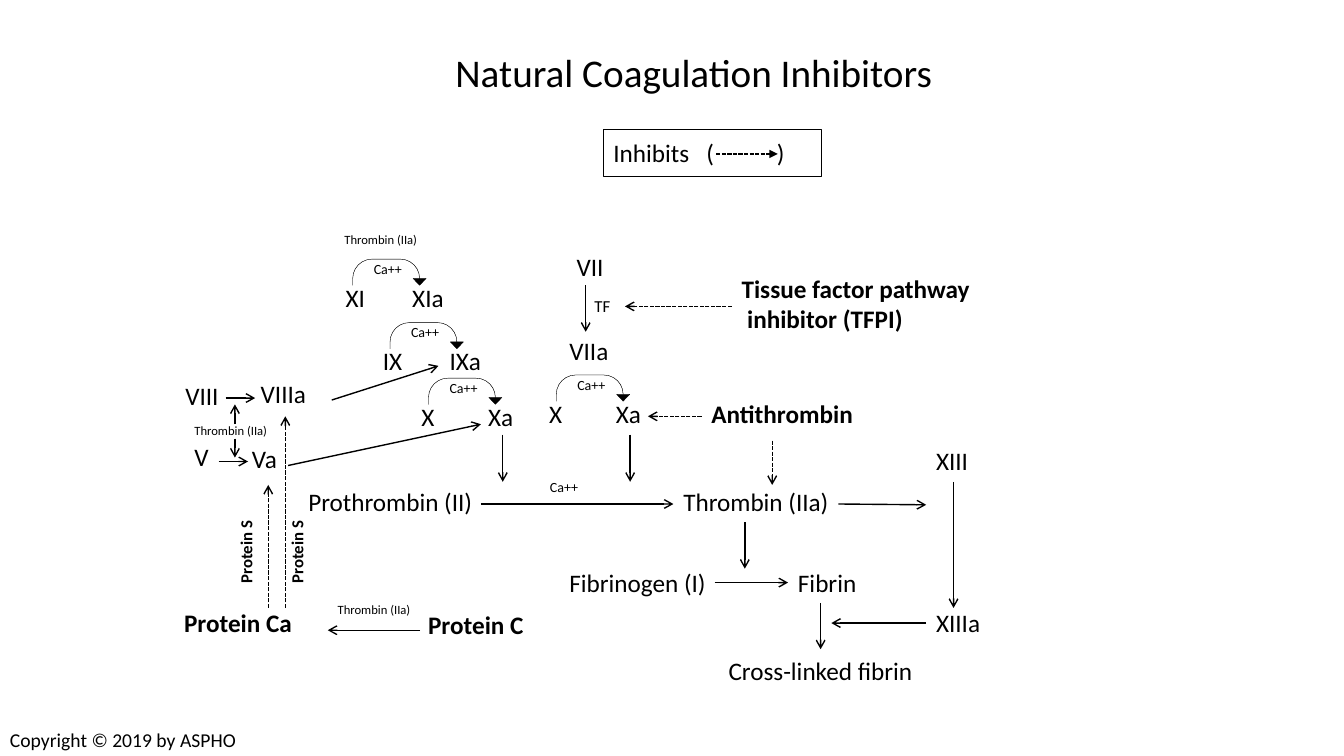
from dataclasses import dataclass

from lxml import etree
from pptx import Presentation
from pptx.dml.color import RGBColor
from pptx.enum.dml import MSO_LINE
from pptx.enum.shapes import MSO_CONNECTOR, MSO_SHAPE
from pptx.enum.text import MSO_ANCHOR, PP_ALIGN
from pptx.oxml.ns import qn
from pptx.util import Cm, Pt

STRAIGHT = MSO_CONNECTOR.STRAIGHT
U_TURN = MSO_SHAPE.U_TURN_ARROW
RECTANGLE = MSO_SHAPE.RECTANGLE
DASH = MSO_LINE.SQUARE_DOT
MIDDLE = MSO_ANCHOR.MIDDLE
LEFT = PP_ALIGN.LEFT


@dataclass(frozen=True)
class Theme:
    font: str = "Calibri"
    ink: RGBColor = RGBColor(0, 0, 0)
    title: int = 28
    factor: int = 18
    copyright: int = 14
    note: int = 12
    calcium: int = 10
    enzyme: int = 9


THEME = Theme()


def style(para, size, bold=False):
    para.alignment = LEFT
    para.font.name = THEME.font
    para.font.size = Pt(size)
    para.font.bold = bold
    para.font.color.rgb = THEME.ink


@dataclass(frozen=True)
class Region:
    page: object
    left: float
    top: float

    def label(self, text, x, y, width, size=THEME.factor, bold=False, rotation=0):
        lines = text.split("\n")
        height = Pt(size * 1.2) * len(lines) + Cm(0.25)
        box = self.page.shapes.add_textbox(
            Cm(self.left + x), Cm(self.top + y), Cm(width), height)
        box.rotation = rotation
        frame = box.text_frame
        frame.word_wrap = True
        frame.text = text
        for para in frame.paragraphs:
            style(para, size, bold)
        return box

    def arrow(self, x1, y1, x2, y2, dashed=False, head="arrow"):
        connector = self.page.shapes.add_connector(
            STRAIGHT, Cm(self.left + x1), Cm(self.top + y1),
            Cm(self.left + x2), Cm(self.top + y2))
        line = connector.line
        line.color.rgb = THEME.ink
        line.width = Pt(1)
        if dashed:
            line.dash_style = DASH
        etree.SubElement(line._get_or_add_ln(), qn("a:tailEnd"), type=head)
        etree.SubElement(connector._element.spPr, qn("a:effectLst"))

    def shape(self, kind, x, y, width, height, weight):
        shape = self.page.shapes.add_shape(
            kind, Cm(self.left + x), Cm(self.top + y), Cm(width), Cm(height))
        shape.shadow.inherit = False
        shape.line.color.rgb = THEME.ink
        shape.line.width = Pt(weight)
        return shape

    def activation(self, x, y, source, product):
        bend = self.shape(U_TURN, x, y, 1.85, 0.66, 0.25)
        bend.fill.solid()
        bend.fill.fore_color.rgb = THEME.ink
        for index, value in enumerate((0, 0.25, 0.262, 0.738, 1)):
            bend.adjustments[index] = value
        self.label(source, x - 0.43, y + 0.45, 1.1)
        self.label(product, x + 1.25, y + 0.45, 1.6)
        self.label("Ca++", x + 0.28, y - 0.09, 1.78, THEME.calcium)


def draw_title(region):
    box = region.label("Natural Coagulation Inhibitors", 0, 0, 13.72, THEME.title)
    box.height = Cm(2.11)
    box.text_frame.vertical_anchor = MIDDLE
    box.text_frame.paragraphs[0].line_spacing = 0.9


def draw_legend(region):
    frame_box = region.shape(RECTANGLE, 0, 0, 5.49, 1.19, 0.5)
    frame_box.fill.background()
    frame = frame_box.text_frame
    frame.vertical_anchor = MIDDLE
    para = frame.paragraphs[0]
    para.text = "Inhibits\t(\t)"
    stops = etree.SubElement(para._p.get_or_add_pPr(), qn("a:tabLst"))
    for position in (2.34, 4.12):
        etree.SubElement(stops, qn("a:tab"), pos=str(Cm(position)), algn="l")
    style(para, THEME.factor)
    region.arrow(2.84, 0.63, 4.39, 0.63, dashed=True, head="triangle")


def draw_intrinsic(region):
    region.label("Thrombin (IIa)", 0, 0, 2.82, THEME.enzyme)
    region.activation(0.46, 0.81, "XI", "XIa")
    region.activation(1.4, 2.41, "IX", "IXa")
    region.activation(2.37, 3.81, "X", "Xa")
    region.arrow(4.24, 5.23, 4.24, 6.42)


def draw_extrinsic(region):
    region.label("VII", 0.67, 0, 1.37)
    region.label("TF", 1.12, 1.14, 1.32, THEME.note)
    region.label("VIIa", 0.49, 2.13, 1.88)
    region.activation(0.41, 3.25, "X", "Xa")
    region.arrow(1.15, 0.99, 1.15, 2.16)
    region.arrow(2.27, 4.75, 2.27, 5.94)


def draw_cofactors(region):
    region.label("VIII", 0, 0.03, 1.68)
    region.label("VIIIa", 1.9, 0, 2.18)
    region.label("Thrombin (IIa)", 0.23, 1.12, 2.54, THEME.enzyme)
    region.label("V", 0.23, 1.58, 0.84)
    region.label("Va", 1.68, 1.63, 1.24)
    for ends in (
        (1.27, 0.61, 2.01, 0.61),
        (1.09, 2.21, 1.83, 2.21),
        (3.94, 0.66, 6.63, -0.2),
        (2.84, 2.31, 7.7, 1.27),
        (1.5, 1.27, 1.5, 0.77),
        (1.5, 1.63, 1.5, 2.11),
    ):
        region.arrow(*ends)


def draw_common_pathway(region):
    for text, x, y, width in (
        ("Prothrombin (II)", 0, 1.02, 4.9),
        ("Thrombin (IIa)", 9.45, 1.02, 4.9),
        ("Fibrinogen (I)", 6.58, 3.07, 4.34),
        ("Fibrin", 12.34, 3.07, 2.77),
        ("XIII", 15.82, 0, 2.29),
        ("XIIIa", 15.82, 4.09, 1.96),
        ("Cross-linked fibrin", 10.59, 5.28, 6.22),
    ):
        region.label(text, x, y, width)
    region.label("Ca++", 6.09, 0.84, 1.85, THEME.calcium)
    for ends in (
        (4.6, 1.6, 9.45, 1.6),
        (11.25, 2.06, 11.25, 3.23),
        (10.49, 3.58, 12.34, 3.58),
        (13.61, 1.6, 15.82, 1.62),
        (16.51, 1.04, 16.51, 4.22),
        (13.16, 4.09, 13.16, 5.26),
        (15.82, 4.6, 13.43, 4.6),
    ):
        region.arrow(*ends)


def draw_direct_inhibitors(region):
    pathway = region.label("Tissue factor pathway\ninhibitor (TFPI)", 2.69, 0, 8.23, bold=True)
    second_line = pathway.text_frame.paragraphs[1]
    second_line._p.get_or_add_pPr().set("marL", str(Cm(0.14)))
    region.label("Antithrombin", 1.93, 3.15, 4.9, bold=True)
    region.arrow(2.69, 0.96, 0, 0.96, dashed=True)
    region.arrow(3.71, 4.34, 3.71, 5.46, dashed=True)
    region.arrow(1.93, 3.73, 0.58, 3.73, dashed=True)


def draw_protein_c(region):
    region.label("Protein C", 6.15, 4.75, 3.43, bold=True)
    region.label("Protein Ca", 0, 4.7, 4.5, bold=True)
    region.label("Thrombin (IIa)", 3.87, 4.55, 2.84, THEME.enzyme)
    region.label("Protein S", 0.46, 2.74, 2.69, THEME.note, True, 270)
    region.label("Protein S", 1.86, 2.85, 2.46, THEME.note, True, 270)
    region.arrow(6.2, 5.39, 3.87, 5.39)
    region.arrow(2.8, 4.83, 2.8, 0, dashed=True)
    region.arrow(2.37, 4.83, 2.37, 1.73, dashed=True)


def draw_copyright(region):
    region.label("Copyright © 2019 by ASPHO", 0, 0, 6.35, THEME.copyright)


def main():
    deck = Presentation()
    deck.slide_width, deck.slide_height = Cm(33.87), Cm(19.05)
    page = deck.slides.add_slide(deck.slide_layouts[6])
    for draw, left, top in (
        (draw_title, 11.23, 0.84),
        (draw_legend, 15.21, 3.25),
        (draw_intrinsic, 8.43, 5.72),
        (draw_extrinsic, 13.61, 6.2),
        (draw_cofactors, 4.42, 9.42),
        (draw_common_pathway, 7.52, 11.1),
        (draw_direct_inhibitors, 15.75, 6.76),
        (draw_protein_c, 4.39, 10.49),
        (draw_copyright, 0, 18.21),
    ):
        draw(Region(page, left, top))
    deck.save("out.pptx")


if __name__ == "__main__":
    main()
